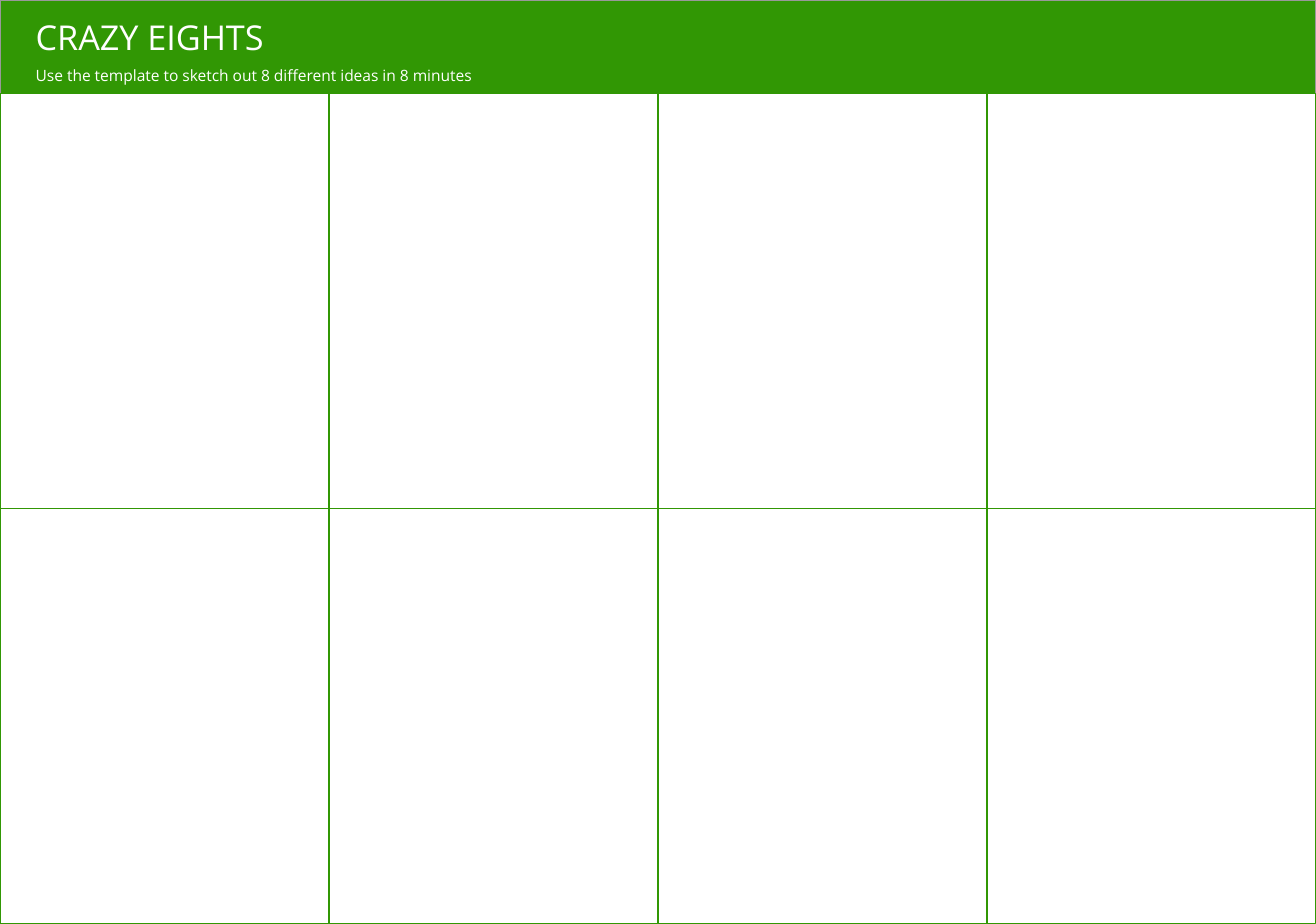
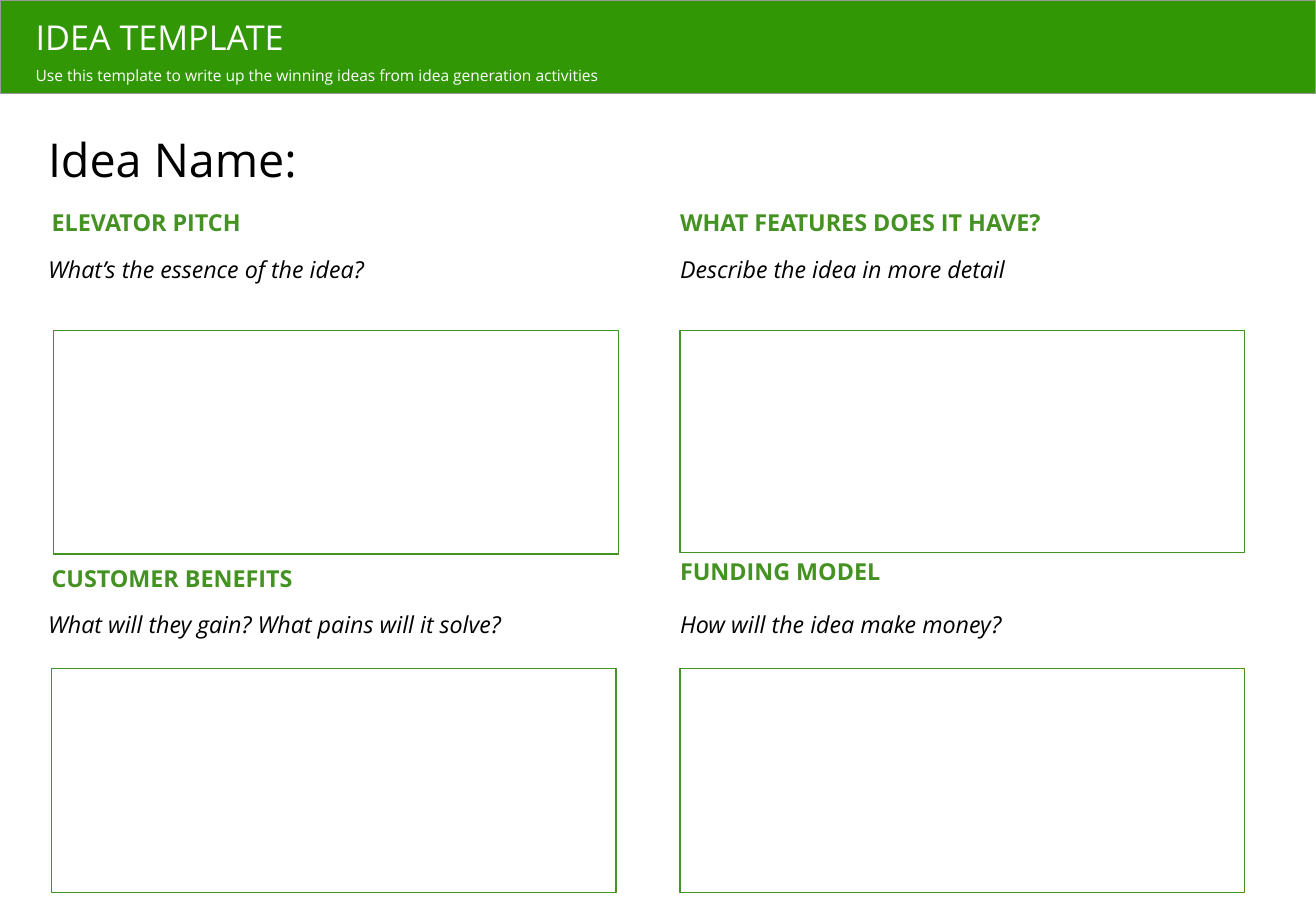
from pptx import Presentation
from pptx.dml.color import RGBColor
from pptx.enum.shapes import MSO_SHAPE
from pptx.util import Cm, Pt

GREEN = RGBColor(0x31, 0x97, 0x04)
LEAF = RGBColor(0x44, 0x92, 0x22)
GREY = RGBColor(0x99, 0x99, 0x99)
WHITE = RGBColor(0xFF, 0xFF, 0xFF)
BLACK = RGBColor(0, 0, 0)
FONT = "Open Sans"
WIDE, HIGH, BAND = 29.84, 20.96, 2.12

# Heading, hint, left and top of hint, heading rise, indents of
# heading and box, drop to box, height of box
PARTS = [
    ("ELEVATOR PITCH", "What’s the essence of the idea?",
     1.09, 5.72, 1.05, 0.08, 0.13, 1.77, 5.08),
    ("WHAT FEATURES DOES IT HAVE?", "Describe the idea in more detail",
     15.42, 5.72, 1.05, 0, 0, 1.77, 5.05),
    ("CUSTOMER BENEFITS", "What will they gain? What pains will it solve?",
     1.09, 13.79, 1.06, 0.08, 0.08, 1.37, 5.08),
    ("FUNDING MODEL", "How will the idea make money?",
     15.42, 13.79, 1.22, 0, 0, 1.37, 5.08),
]


def add_rect(slide, left, top, width, height, line, fill=None):
    rect = slide.shapes.add_shape(
        MSO_SHAPE.RECTANGLE, Cm(left), Cm(top), Cm(width), Cm(height))
    rect.shadow.inherit = False
    rect.line.color.rgb = line
    rect.line.width = Pt(0.75)
    if fill is None:
        rect.fill.background()
    else:
        rect.fill.solid()
        rect.fill.fore_color.rgb = fill


def add_frame(slide, left, top, width, height, inset=0):
    """Return the frame of a new wrapping text box."""
    frame = slide.shapes.add_textbox(
        Cm(left), Cm(top), Cm(width), Cm(height)).text_frame
    frame.word_wrap = True
    frame.margin_left = frame.margin_right = Cm(inset)
    frame.margin_top = frame.margin_bottom = Cm(inset)
    return frame


def write(para, text, size, color, bold=False, italic=False,
          spacing=1.0, before=0):
    para.line_spacing = spacing
    para.space_before = Pt(before)
    run = para.add_run()
    run.text = text
    font = run.font
    font.name, font.size = FONT, Pt(size)
    font.bold, font.italic = bold, italic
    font.color.rgb = color


def add_band(slide, title, note):
    add_rect(slide, 0, 0, WIDE, BAND, GREY, GREEN)
    frame = add_frame(slide, 0.53, 0.08, 20.88, 3.18, inset=0.28)
    write(frame.paragraphs[0], title, 22, WHITE)
    write(frame.add_paragraph(), note, 10, WHITE, spacing=1.5)


def add_grid(slide, left, top, width, height, cols, rows):
    wide, high = width / cols, height / rows
    for row in range(rows):
        for col in range(cols):
            add_rect(slide, left + col * wide, top + row * high,
                     wide, high, GREEN)


def add_part(slide, head, hint, left, top, rise, shift, inset, drop, height):
    """Place a heading, a hint and an empty answer box."""
    frame = add_frame(slide, left, top, 12.95, 3.38)
    write(frame.paragraphs[0], hint, 15, BLACK, italic=True,
          spacing=1.1, before=9)
    frame = add_frame(slide, left + shift, top - rise, 8.97, 1.3)
    write(frame.paragraphs[0], head, 15, LEAF, bold=True,
          spacing=1.1, before=9)
    add_rect(slide, left + inset, top + drop, 12.8, height, LEAF)


def sketch_slide(slide):
    add_band(slide, "CRAZY EIGHTS",
             "Use the template to sketch out 8 different ideas in 8 minutes")
    add_grid(slide, 0, BAND, WIDE, HIGH - BAND, cols=4, rows=2)


def idea_slide(slide):
    add_band(slide, "IDEA TEMPLATE",
             "Use this template to write up the winning ideas "
             "from idea generation activities")
    frame = add_frame(slide, 1.09, 3.12, 27.66, 1.65)
    write(frame.paragraphs[0], "Idea Name:", 30, BLACK, spacing=0.9)
    for part in PARTS:
        add_part(slide, *part)


def main():
    deck = Presentation()
    deck.slide_width, deck.slide_height = Cm(WIDE), Cm(HIGH)
    for build in (sketch_slide, idea_slide):
        build(deck.slides.add_slide(deck.slide_layouts[6]))
    deck.save("out.pptx")


if __name__ == "__main__":
    main()
